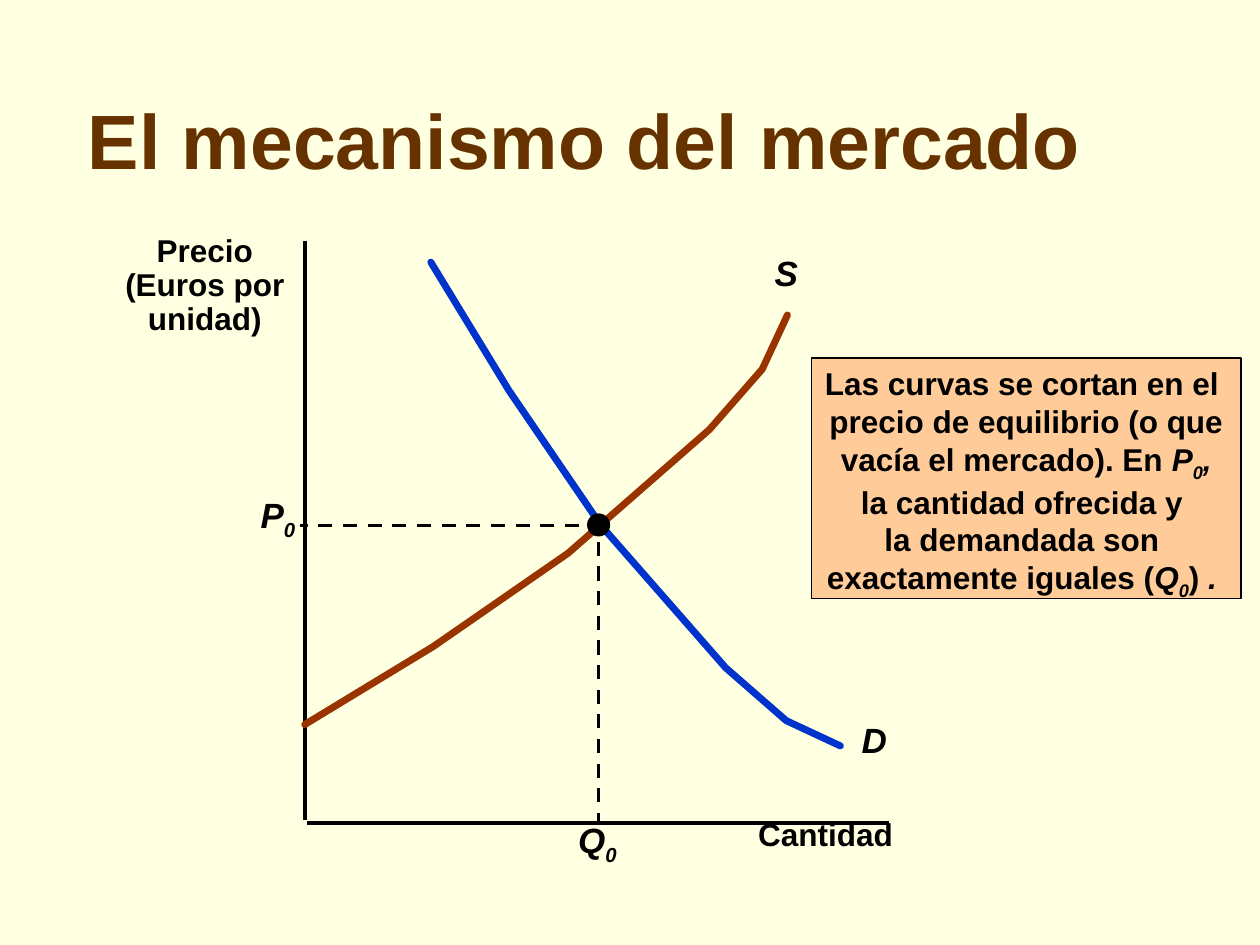
from lxml import etree
from pptx import Presentation
from pptx.dml.color import RGBColor
from pptx.enum.dml import MSO_LINE_DASH_STYLE as Dash
from pptx.enum.shapes import MSO_CONNECTOR as Connector, MSO_SHAPE as Shape
from pptx.enum.text import MSO_ANCHOR as Anchor, PP_ALIGN as Align
from pptx.oxml.ns import qn
from pptx.util import Pt

COLORS = {
    "background": "FFFFE1",
    "title": "663300",
    "ink": "000000",
    "demand": "0033CC",
    "supply": "993300",
    "note": "FFCC99",
}
AXIS_X, AXIS_Y = 174.2, 470.2
PRICE_Y, QUANTITY_X = 300.2, 342
DEMAND = [(246.2, 149.8), (290.9, 223.2), (343.4, 300.2),
          (414.7, 381.6), (449.3, 411.8), (480.2, 426.2)]
SUPPLY = [(174.2, 414), (247.7, 369.4), (324.7, 316.1),
          (405.4, 245.5), (435.6, 211), (450, 180)]
SYMBOL = {"italic": True}
SUBSCRIPT = {"italic": True, "baseline": -25000}


def rgb(name):
    return RGBColor.from_string(COLORS[name])


def style_line(line, color, width):
    line.color.rgb = rgb(color)
    line.width = Pt(width)


def write(frame, paragraphs, size=18, color="ink", align=Align.LEFT,
          anchor=Anchor.TOP, wrap=True, spacing=None):
    frame.word_wrap = wrap
    frame.vertical_anchor = anchor
    for index, pieces in enumerate(paragraphs):
        paragraph = frame.add_paragraph() if index else frame.paragraphs[0]
        paragraph.alignment = align
        if spacing:
            paragraph.line_spacing = spacing
        for words, style in pieces:
            run = paragraph.add_run()
            run.text = words
            run.font.name = "Arial"
            run.font.size = Pt(size)
            run.font.bold = True
            run.font.italic = style.get("italic", False)
            run.font.color.rgb = rgb(color)
            if "baseline" in style:
                run.font._element.set("baseline", str(style["baseline"]))


def add_text(slide, box, paragraphs, **options):
    write(slide.shapes.add_textbox(*map(Pt, box)).text_frame, paragraphs, **options)


def add_line(slide, start, end, dashed=False):
    line = slide.shapes.add_connector(Connector.STRAIGHT, *map(Pt, start + end))
    style_line(line.line, "ink", 2)
    if dashed:
        line.line.dash_style = Dash.DASH
    etree.SubElement(line._element.spPr, qn("a:effectLst"))


def add_curve(slide, points, color):
    start, *rest = [(Pt(x), Pt(y)) for x, y in points]
    builder = slide.shapes.build_freeform(*start)
    builder.add_line_segments(rest, close=False)
    curve = builder.convert_to_shape()
    curve.shadow.inherit = False
    curve.fill.background()
    style_line(curve.line, color, 4)
    outline = curve._element.spPr.find(qn("a:ln"))
    outline.set("cap", "rnd")
    etree.SubElement(outline, qn("a:round"))


def add_filled(slide, kind, box, fill):
    shape = slide.shapes.add_shape(kind, *map(Pt, box))
    shape.shadow.inherit = False
    shape.fill.solid()
    shape.fill.fore_color.rgb = rgb(fill)
    style_line(shape.line, "ink", 1)
    return shape


def main():
    deck = Presentation()
    deck.slide_width, deck.slide_height = Pt(720), Pt(540)
    slide = deck.slides.add_slide(deck.slide_layouts[6])
    slide.background.fill.solid()
    slide.background.fill.fore_color.rgb = rgb("background")

    add_text(slide, (43.2, 18, 628.6, 91.4), [[("El mecanismo del mercado", {})]],
             size=44, color="title", anchor=Anchor.BOTTOM)

    add_line(slide, (AXIS_X, 137.5), (AXIS_X, 468.7))
    add_line(slide, (175.7, AXIS_Y), (508.3, AXIS_Y))
    add_text(slide, (426.2, 462.2, 96.5, 31), [[("Cantidad", {})]])

    add_curve(slide, DEMAND, "demand")
    add_curve(slide, SUPPLY, "supply")

    note = add_filled(slide, Shape.RECTANGLE, (463.7, 204.5, 245.5, 137.5), "note")
    write(note.text_frame, [
        [("Las curvas se cortan en el ", {})],
        [("precio de equilibrio (o que", {})],
        [(" vacía el mercado). En ", {}), ("P", SYMBOL), ("0", SUBSCRIPT), (", ", SYMBOL)],
        [("la cantidad ofrecida y ", {})],
        [("la demandada son ", {})],
        [("exactamente iguales (", {}), ("Q", SYMBOL), ("0", SUBSCRIPT), (")", {}),
         (" . ", SYMBOL)],
    ], align=Align.CENTER, wrap=False)

    add_line(slide, (344.9, PRICE_Y), (171.4, PRICE_Y), dashed=True)
    add_filled(slide, Shape.OVAL, (336, 293.9, 12.2, 12.2), "ink")
    add_line(slide, (QUANTITY_X, 309.6), (QUANTITY_X, 470.9), dashed=True)

    for left, top, width, pieces in [
        (485.3, 406.8, 28.8, [("D", SYMBOL)]),
        (435.6, 140.4, 27.4, [("S", SYMBOL)]),
        (141.8, 278.6, 34.6, [("P", SYMBOL), ("0", SUBSCRIPT)]),
        (323.3, 464.4, 36.7, [("Q", SYMBOL), ("0", SUBSCRIPT)]),
    ]:
        add_text(slide, (left, top, width, 31), [pieces], size=20, wrap=False)

    add_text(slide, (63.4, 131, 107.3, 65.5),
             [[("Precio", {})], [("(Euros por unidad)", {})]],
             align=Align.CENTER, spacing=0.9)

    deck.save("out.pptx")


if __name__ == "__main__":
    main()
